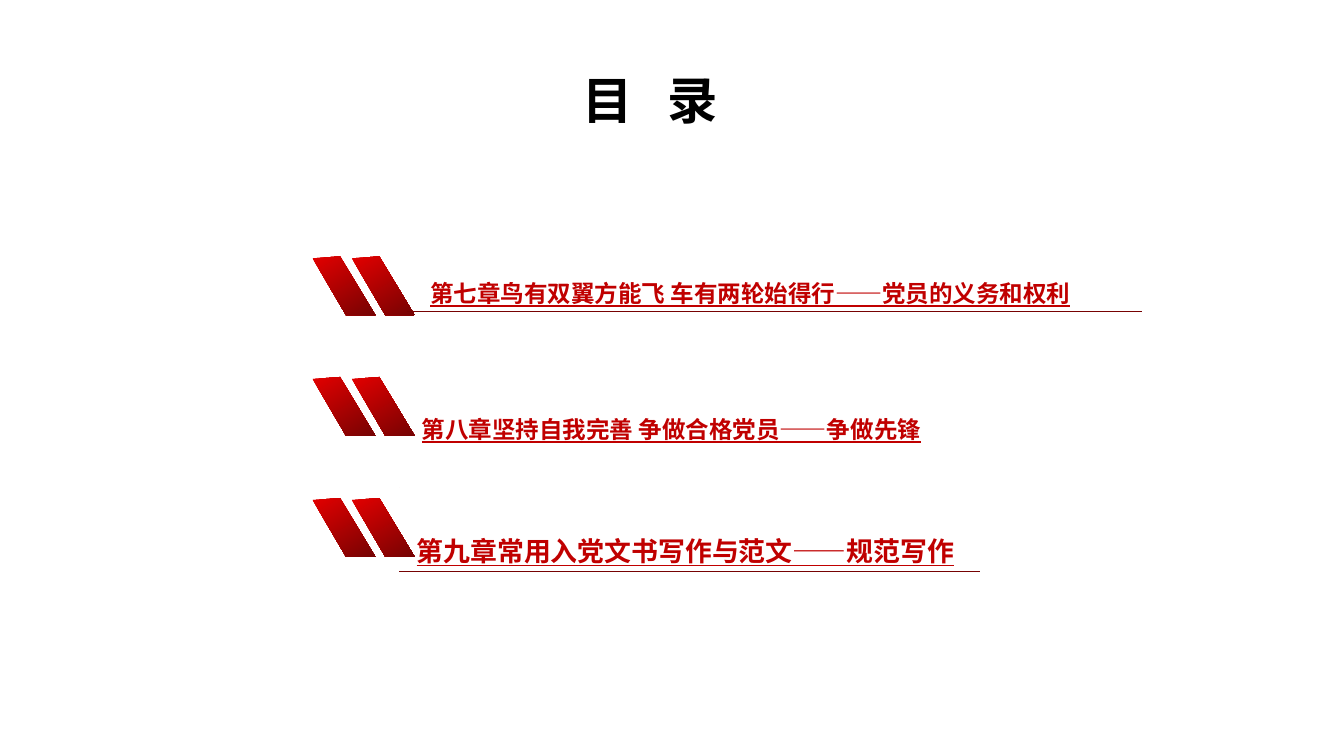
from lxml import etree
from pptx import Presentation
from pptx.dml.color import RGBColor
from pptx.enum.text import MSO_ANCHOR, PP_ALIGN
from pptx.oxml.ns import qn
from pptx.util import Cm, Pt

BOTTOM, TOP = MSO_ANCHOR.BOTTOM, MSO_ANCHOR.TOP
LEFT = PP_ALIGN.LEFT
FONT = "Noto Sans CJK SC"
COLORS = {"title": "000000", "text": "C00000", "light": "E30000", "dark": "760303"}


def add_run(para, text, size, color):
    run = para.add_run()
    run.text = text
    font = run.font
    font.size, font.bold, font.name = Pt(size), True, FONT
    font.color.rgb = RGBColor.from_string(COLORS[color])
    etree.SubElement(font._element, qn("a:ea")).set("typeface", FONT)
    return run


def shade(shape, angle):
    """Fill with the red gradient, without outline or shadow."""
    shape.shadow.inherit = False
    shape.line.fill.background()
    shape.fill.gradient()
    shape.fill.gradient_angle = angle
    for stop, place, color in zip(shape.fill.gradient_stops, (0, 1), ("light", "dark")):
        stop.position = place
        stop.color.rgb = RGBColor.from_string(COLORS[color])


deck = Presentation()
deck.slide_width, deck.slide_height = Cm(33.87), Cm(19.05)
slide = deck.slides.add_slide(deck.slide_layouts[5])
shapes = slide.shapes

# Title, with the gap between its two characters set by letter spacing
title = shapes.title
title.left, title.top, title.width, title.height = Cm(14.43), Cm(1.61), Cm(5), Cm(1.8)
frame = title.text_frame
frame.vertical_anchor = TOP
frame.word_wrap = True
para = frame.paragraphs[0]
para.alignment = LEFT
for part in ("目", " ", "录"):
    run = add_run(para, part, 36, "title")
    if part == " ":
        run.font._element.set("spc", "1640")

# Chapters: bar top, strip left, right and base, text inset, size, ruled, wording
chapters = [
    (6.46, 10.26, 28.78, 7.87, 0.58, 16.8, True,
     "第七章鸟有双翼方能飞 车有两轮始得行——党员的义务和权利"),
    (9.5, 10.06, 24.71, 11.3, 0.57, 16.8, False,
     "第八章坚持自我完善 争做合格党员——争做先锋"),
    (12.55, 10.06, 24.71, 14.41, 0.44, 19.2, True,
     "第九章常用入党文书写作与范文——规范写作"),
]
slant = [(0.89, 1.48), (0.15, 1.48), (-0.69, 0.05)]
tall, thin = 2.13, 0.02
for top, left, right, base, inset, size, ruled, text in chapters:
    for x in (8.57, 9.56):
        pen = shapes.build_freeform(Cm(x), Cm(top))
        pen.add_line_segments([(Cm(x + dx), Cm(top + dy)) for dx, dy in slant])
        shade(pen.convert_to_shape(), 301)

    # The strip is a thin rule at the base and a point at the top left
    pen = shapes.build_freeform(Cm(left), Cm(base))
    pen.add_line_segments([(Cm(right), Cm(base)), (Cm(right), Cm(base - thin)),
                           (Cm(left), Cm(base - thin))])
    pen.move_to(Cm(left), Cm(base - tall))
    pen.add_line_segments([(Cm(left), Cm(base - tall))])
    strip = pen.convert_to_shape()
    shade(strip, 270)
    if not ruled:
        strip.fill.background()
    frame = strip.text_frame
    frame.word_wrap = True
    frame.vertical_anchor = BOTTOM
    frame.margin_left, frame.margin_right = Cm(inset), Cm(0.1)
    frame.margin_top = frame.margin_bottom = Cm(0.13)
    para = frame.paragraphs[0]
    para.alignment = LEFT
    para.line_spacing = 1.3
    add_run(para, text, size, "text").font.underline = True

deck.save("out.pptx")
